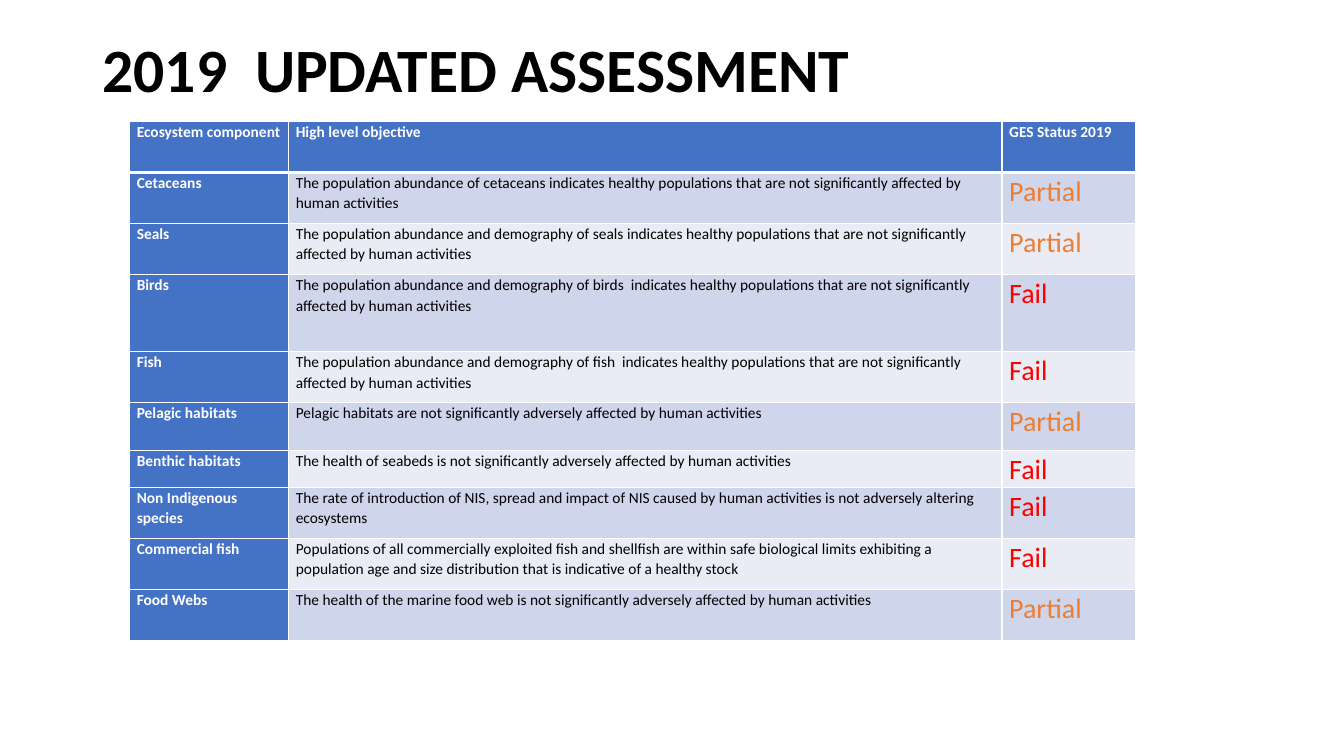
from pptx import Presentation
from pptx.dml.color import RGBColor
from pptx.enum import text
from pptx.oxml import parse_xml
from pptx.oxml.ns import nsdecls
from pptx.util import Pt

TITLE = "2019  UPDATED ASSESSMENT"
HEAD = ("Ecosystem component", "High level objective", "GES Status 2019")
ROWS = [
    ("Cetaceans", "The population abundance of cetaceans indicates healthy populations "
     "that are not significantly affected by human activities", "Partial"),
    ("Seals", "The population abundance and demography of seals indicates healthy "
     "populations that are not significantly affected by human activities", "Partial"),
    ("Birds", "The population abundance and demography of birds  indicates healthy "
     "populations that are not significantly affected by human activities", "Fail"),
    ("Fish", "The population abundance and demography of fish  indicates healthy "
     "populations that are not significantly affected by human activities", "Fail"),
    ("Pelagic habitats", "Pelagic habitats are not significantly adversely affected "
     "by human activities", "Partial"),
    ("Benthic habitats", "The health of seabeds is not significantly adversely affected "
     "by human activities", "Fail"),
    ("Non Indigenous species", "The rate of introduction of NIS, spread and impact of NIS "
     "caused by human activities is not adversely altering ecosystems", "Fail"),
    ("Commercial fish", "Populations of all commercially exploited fish and shellfish are "
     "within safe biological limits exhibiting a population age and size distribution "
     "that is indicative of a healthy stock", "Fail"),
    ("Food Webs", "The health of the marine food web is not significantly adversely "
     "affected by human activities", "Partial"),
]
COLS = (113.6, 509.6, 95.8)
ROW = 36.5
TALL = {"Birds": 55, "Pelagic habitats": 34.3, "Benthic habitats": 18}
HEX = {"blue": "4472C4", "band": "CFD5EA", "pale": "E9EBF5", "white": "FFFFFF",
       "black": "000000", "Partial": "ED7D31", "Fail": "FF0000"}
FONT = "Calibri"


def color(name):
    return RGBColor.from_string(HEX[name])


def write(para, words, size, ink, bold):
    run = para.add_run()
    run.text = words
    font = run.font
    font.name, font.size, font.bold = FONT, Pt(size), bold
    font.color.rgb = color(ink)


def edge(cell, widths):
    """Draw white borders; widths maps a side (L, R, T, B) to points."""
    props = cell._tc.get_or_add_tcPr()
    for n, (side, width) in enumerate(widths.items()):
        props.insert(n, parse_xml(
            f'<a:ln{side} {nsdecls("a")} w="{Pt(width)}"><a:solidFill>'
            f'<a:srgbClr val="{HEX["white"]}"/></a:solidFill></a:ln{side}>'))


def fill_cell(cell, words, row, col):
    head = row == 0
    if head or col == 0:
        back, ink, size, bold = "blue", "white", 11, True
    else:
        back = "band" if row % 2 else "pale"
        ink, size, bold = ("black", 11, False) if col == 1 else (words, 20, False)
    cell.fill.solid()
    cell.fill.fore_color.rgb = color(back)
    cell.margin_left = cell.margin_right = Pt(5.2)
    cell.margin_top = cell.margin_bottom = 0
    para = cell.text_frame.paragraphs[0]
    para.line_spacing, para.space_after = 1.07, Pt(8)
    write(para, words, size, ink, bold)
    edge(cell, {"L": 1, "R": 1, "T": 3 if row == 1 else 1, "B": 3 if head else 1})


def main():
    deck = Presentation()
    deck.slide_width, deck.slide_height = Pt(960), Pt(540)
    slide = deck.slides.add_slide(deck.slide_layouts[5])

    title = slide.shapes.title
    title.left, title.top, title.width, title.height = Pt(66), Pt(28.8), Pt(828), Pt(45.4)
    frame = title.text_frame
    frame.auto_size = text.MSO_AUTO_SIZE.NONE
    frame.vertical_anchor = text.MSO_ANCHOR.MIDDLE
    para = frame.paragraphs[0]
    para.alignment, para.line_spacing = text.PP_ALIGN.LEFT, 0.9
    write(para, TITLE, 44, "black", True)

    highs = [ROW] + [TALL.get(row[0], ROW) for row in ROWS]
    grid = slide.shapes.add_table(len(highs), len(COLS), Pt(92.5), Pt(86.7),
                                  Pt(sum(COLS)), Pt(sum(highs))).table
    for col, width in zip(grid.columns, COLS):
        col.width = Pt(width)
    for r, (line, high) in enumerate(zip([HEAD] + ROWS, highs)):
        grid.rows[r].height = Pt(high)
        for c, words in enumerate(line):
            fill_cell(grid.cell(r, c), words, r, c)
    deck.save("out.pptx")


if __name__ == "__main__":
    main()
